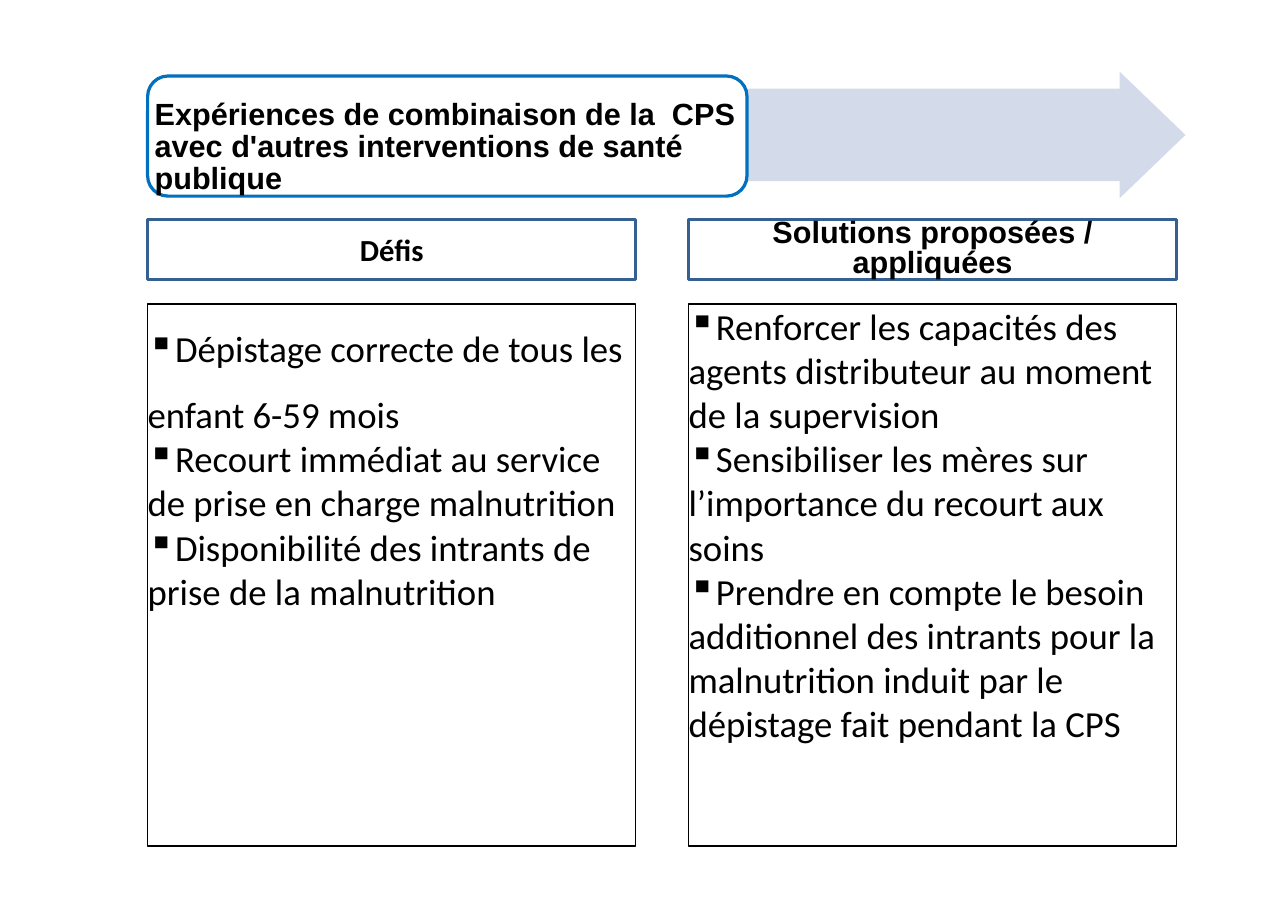
from dataclasses import dataclass

import lxml.etree
import pptx
import pptx.dml.color
import pptx.enum.shapes
import pptx.enum.text
import pptx.oxml.ns
import pptx.shapes.autoshape
import pptx.slide
import pptx.text.text
import pptx.util

Inches = pptx.util.Inches
Pt = pptx.util.Pt
MSO_SHAPE = pptx.enum.shapes.MSO_SHAPE
PP_ALIGN = pptx.enum.text.PP_ALIGN
MSO_ANCHOR = pptx.enum.text.MSO_ANCHOR
qn = pptx.oxml.ns.qn

LEFT, COLUMN_WIDTH, COLUMN_STEP = 1.34, 4.43, 4.91


@dataclass
class Column:
    heading: str
    heading_font: str
    heading_spacing: float
    items: list[str]
    first_spacing: float


COLUMNS = [
    Column("Défis", "Calibri", 1.0, [
        "Dépistage correcte de tous les enfant 6-59 mois",
        "Recourt immédiat au service de prise en charge malnutrition",
        "Disponibilité des intrants de prise de la malnutrition",
    ], 1.5),
    Column("Solutions proposées / appliquées", "Arial", 0.8, [
        "Renforcer les capacités des agents distributeur au moment de la supervision",
        "Sensibiliser les mères sur l’importance du recourt aux soins",
        "Prendre en compte le besoin additionnel des intrants pour la malnutrition "
        "induit par le dépistage fait pendant la CPS",
    ], 1.0),
]


def rgb(value: str) -> pptx.dml.color.RGBColor:
    return pptx.dml.color.RGBColor.from_string(value)


def add_box(s: pptx.slide.Slide, kind: MSO_SHAPE, left: float, top: float, width: float,
            height: float, *, fill: str | None = None, line: str | None = None,
            line_width: float = 1, insets: tuple[float, ...] = (0, 0, 0, 0),
            anchor: MSO_ANCHOR = MSO_ANCHOR.TOP) -> pptx.shapes.autoshape.Shape:
    """Add a preset shape; insets are left, top, right, bottom."""
    sp = s.shapes.add_shape(kind, Inches(left), Inches(top), Inches(width), Inches(height))
    sp.shadow.inherit = False
    if fill:
        sp.fill.solid()
        sp.fill.fore_color.rgb = rgb(fill)
    else:
        sp.fill.background()
    if line:
        sp.line.color.rgb = rgb(line)
        sp.line.width = Pt(line_width)
    else:
        sp.line.fill.background()
    tf = sp.text_frame
    tf.word_wrap = True
    tf.vertical_anchor = anchor
    tf.margin_left, tf.margin_top, tf.margin_right, tf.margin_bottom = map(Inches, insets)
    return sp


def write(p: pptx.text.text._Paragraph, text: str, *, font: str = "Calibri", size: float = 20,
          bold: bool = False, color: str = "000000", spacing: float = 1.0,
          align: PP_ALIGN = PP_ALIGN.LEFT, bullet: str | None = None) -> None:
    p.alignment = align
    p.line_spacing = spacing
    r = p.add_run()
    r.text = text
    r.font.name = font
    r.font.size = Pt(size)
    r.font.bold = bold
    r.font.color.rgb = rgb(color)
    if bullet:
        pPr = p._p.get_or_add_pPr()
        pPr.set("marL", "0")
        pPr.set("indent", "0")
        lxml.etree.SubElement(pPr, qn("a:buChar")).set("char", bullet)


def add_banner(s: pptx.slide.Slide) -> None:
    arrow = add_box(s, MSO_SHAPE.RIGHT_ARROW, 6.76, 0.65, 4, 1.15, fill="CFD8E8")
    arrow.adjustments[0] = 0.73
    arrow.adjustments[1] = 0.52
    color = arrow.fill._xPr.find(qn("a:solidFill"))[0]
    lxml.etree.SubElement(color, qn("a:alpha")).set("val", "90000")

    title = add_box(s, MSO_SHAPE.ROUNDED_RECTANGLE, LEFT, 0.69, 5.44, 1.09, fill="FFFFFF",
                    line="0070BF", line_width=2.1, insets=(0.01, 0.17, 0, 0))
    title.adjustments[0] = 0.17
    write(title.text_frame.paragraphs[0],
          "Expériences de combinaison de la  CPS avec d'autres interventions de santé publique",
          font="Arial", bold=True, spacing=0.86)


def add_column(s: pptx.slide.Slide, left: float, column: Column) -> None:
    heading = add_box(s, MSO_SHAPE.RECTANGLE, left, 1.99, COLUMN_WIDTH, 0.55, line="366091",
                      line_width=1.9, insets=(0.55, 0, 0.55, 0), anchor=MSO_ANCHOR.MIDDLE)
    write(heading.text_frame.paragraphs[0], column.heading, font=column.heading_font,
          bold=True, spacing=column.heading_spacing, align=PP_ALIGN.CENTER)

    body = add_box(s, MSO_SHAPE.RECTANGLE, left, 2.76, COLUMN_WIDTH, 4.92,
                   line="000000", line_width=0.75)
    tf = body.text_frame
    for i, item in enumerate(column.items):
        p = tf.add_paragraph() if i else tf.paragraphs[0]
        write(p, item, size=24, bullet="▪", spacing=1.0 if i else column.first_spacing)


def main() -> None:
    prs = pptx.Presentation()
    prs.slide_width, prs.slide_height = Inches(11.69), Inches(8.27)
    s = prs.slides.add_slide(prs.slide_layouts[6])
    add_banner(s)
    for i, column in enumerate(COLUMNS):
        add_column(s, LEFT + i * COLUMN_STEP, column)
    prs.save("out.pptx")


if __name__ == "__main__":
    main()
